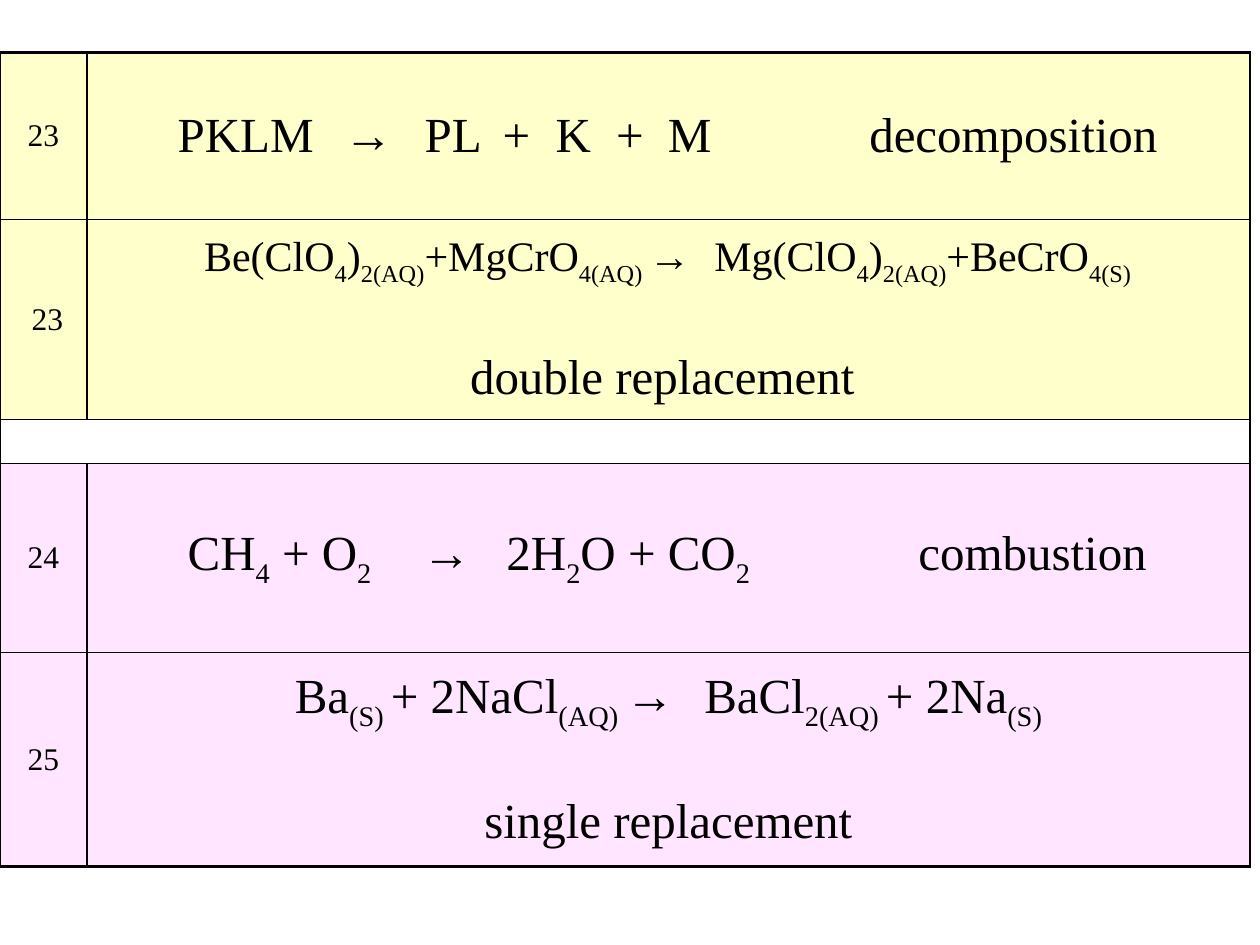
from pptx import Presentation
from pptx.dml.color import RGBColor
from pptx.enum.text import MSO_ANCHOR, PP_ALIGN
from pptx.oxml.ns import qn
from pptx.util import Inches, Pt
from lxml import etree

CENTER = PP_ALIGN.CENTER
LEFT = PP_ALIGN.LEFT
MIDDLE = MSO_ANCHOR.MIDDLE
FONT = "Times New Roman"
YELLOW, PINK, BLACK = "FFFFCC", "FFE5FF", "000000"
COLUMN_WIDTHS = [0.69, 9.23]
ROW_HEIGHTS = [1.32, 1.59, 0.35, 1.5, 1.7]
SPACER_ROW = 2
ROW_BORDERS = [(2, 0.25), (0.25, 1), (1, 1), (1, 1), (1, 2)]

# Each reaction alternates normal and subscript text, separated by "|".
REACTIONS = [
    dict(row=0, number="23", fill=YELLOW, size=28,
         equation="\tPKLM\t→\tPL\t+\tK\t+\tM\tdecomposition",
         tabs=[0.68, 2, 2.64, 3.26, 3.68, 4.16, 4.57, 6.17]),
    dict(row=1, number=" 23", fill=YELLOW, size=24, kind="double replacement ",
         equation="\tBe(ClO|4|)|2(AQ)|+MgCrO|4(AQ) |→\tMg(ClO|4|)|2(AQ)|+BeCrO|4(S)",
         tabs=[0.89, 4.94]),
    dict(row=3, number="24", fill=PINK, size=28,
         equation="\tCH|4| + O|2|\t→\t2H|2|O + CO|2|\tcombustion",
         tabs=[0.76, 2.62, 3.29, 6.56]),
    dict(row=4, number="25", fill=PINK, size=28, kind="single replacement",
         equation="\tBa|(S) |+ 2NaCl|(AQ) |→\tBaCl|2(AQ) |+ 2Na|(S)",
         tabs=[1.61, 4.86]),
]


def color(value):
    """Turn a hex string into a colour."""
    return RGBColor.from_string(value)


def write_text(paragraph, text, size=28, align=CENTER, before=0, tabs=()):
    """Write text with subscripts between bars, and set its format."""
    paragraph.alignment = align
    paragraph.space_before = Pt(before)
    if tabs:
        properties = paragraph._p.get_or_add_pPr()
        tab_list = etree.SubElement(properties, qn("a:tabLst"))
        for position in tabs:
            etree.SubElement(tab_list, qn("a:tab"), pos=str(Inches(position)), algn="l")
    for index, part in enumerate(text.split("|")):
        run = paragraph.add_run()
        run.text = part
        run.font.name = FONT
        run.font.size = Pt(size)
        run.font.color.rgb = color(BLACK)
        if index % 2:
            run._r.get_or_add_rPr().set("baseline", "-25000")


def set_borders(cell, top, bottom):
    """Draw the four black borders of a cell."""
    properties = cell._tc.get_or_add_tcPr()
    widths = {"a:lnL": 1, "a:lnR": 1, "a:lnT": top, "a:lnB": bottom}
    for index, (tag, width) in enumerate(widths.items()):
        line = etree.Element(qn(tag), w=str(Pt(width)))
        fill = etree.SubElement(line, qn("a:solidFill"))
        etree.SubElement(fill, qn("a:srgbClr"), val=BLACK)
        properties.insert(index, line)


def format_cell(cell, borders, margin=0.04):
    """Set the margins, anchor, empty fill and borders of a cell."""
    cell.margin_left = cell.margin_right = Inches(margin)
    cell.margin_top = cell.margin_bottom = Inches(margin)
    cell.vertical_anchor = MIDDLE
    cell.fill.background()
    set_borders(cell, *borders)


def add_reaction_table(slide):
    """Add the formatted grid with its merged spacer row."""
    frame = slide.shapes.add_table(
        len(ROW_HEIGHTS), len(COLUMN_WIDTHS), Inches(0), Inches(0.42),
        Inches(sum(COLUMN_WIDTHS)), Inches(sum(ROW_HEIGHTS)))
    table = frame.table
    table.first_row = table.horz_banding = False
    for column, width in zip(table.columns, COLUMN_WIDTHS):
        column.width = Inches(width)
    for index, (row, height) in enumerate(zip(table.rows, ROW_HEIGHTS)):
        row.height = Inches(height)
        for cell in row.cells:
            format_cell(cell, ROW_BORDERS[index], 0 if index == SPACER_ROW else 0.04)
    table.cell(SPACER_ROW, 0).merge(table.cell(SPACER_ROW, 1))
    return table


def fill_reaction(table, row, number, equation, fill, size, tabs, kind=None):
    """Fill a row with the number, equation and kind of a reaction."""
    number_cell, reaction_cell = table.cell(row, 0), table.cell(row, 1)
    for cell in (number_cell, reaction_cell):
        cell.fill.solid()
        cell.fill.fore_color.rgb = color(fill)
    write_text(number_cell.text_frame.paragraphs[0], number, size=18)
    frame = reaction_cell.text_frame
    write_text(frame.paragraphs[0], equation, size=size, align=LEFT, tabs=tabs)
    if kind:
        write_text(frame.add_paragraph(), kind, before=36)


def main():
    """Build and save the slide."""
    presentation = Presentation()
    presentation.slide_width, presentation.slide_height = Inches(10), Inches(7.5)
    slide = presentation.slides.add_slide(presentation.slide_layouts[6])
    table = add_reaction_table(slide)
    for reaction in REACTIONS:
        fill_reaction(table, **reaction)
    presentation.save("out.pptx")


if __name__ == "__main__":
    main()
